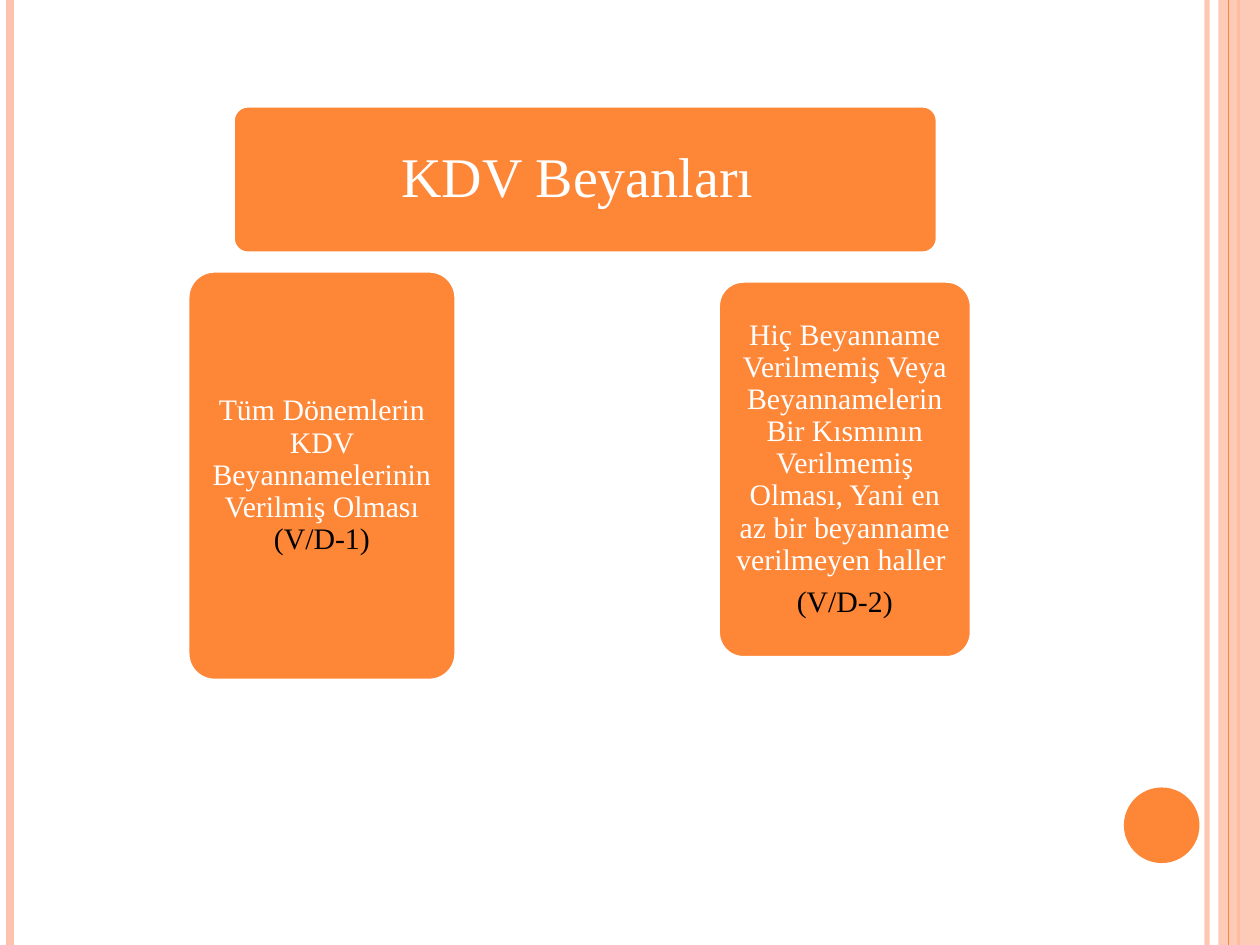
"""Build a slide of VAT return cases: a heading above two rounded boxes."""
from lxml.etree import SubElement as Sub
from pptx import Presentation
from pptx.dml.color import RGBColor
from pptx.enum.shapes import MSO_CONNECTOR as Conn, MSO_SHAPE as Geom
from pptx.enum.text import MSO_ANCHOR as Anchor, PP_ALIGN as Align
from pptx.oxml.ns import qn
from pptx.util import Inches, Pt

ORANGE, PEACH, WHITE, BLACK = "FE8637", "FEC3AE", "FFFFFF", "000000"


def paint(color, code, alpha=100):
    """Set a solid fill or a font to a hex colour, with opacity in percent."""
    if hasattr(color, "solid"):
        color.solid()
        color.fore_color.rgb = RGBColor.from_string(code)
        if alpha < 100:
            tint = next(color._xPr.iter(qn("a:srgbClr")))
            Sub(tint, qn("a:alpha"), val=str(alpha * 1000))
    else:
        color.rgb = RGBColor.from_string(code)


def write(shape, paras, size, inset):
    """Fill a shape with centred paragraphs made of (text, colour) runs."""
    frame = shape.text_frame
    look = {"word_wrap": True, "vertical_anchor": Anchor.MIDDLE}
    for side in ("left", "top", "right", "bottom"):
        look["margin_" + side] = Inches(inset)
    for key, val in look.items():
        setattr(frame, key, val)
    for num, runs in enumerate(paras):
        para = frame.add_paragraph() if num else frame.paragraphs[0]
        form = {"alignment": Align.CENTER, "line_spacing": 0.9,
                "space_before": Pt(0), "space_after": Pt(size * 0.35)}
        for key, val in form.items():
            setattr(para, key, val)
        for text, code in runs:
            run = para.add_run()
            run.text = text
            for key, val in {"name": "Times New Roman", "size": Pt(size)}.items():
                setattr(run.font, key, val)
            paint(run.font.color, code)


deck = Presentation()
deck.slide_width, deck.slide_height = Inches(10), Inches(7.5)
slide = deck.slides.add_slide(deck.slide_layouts[5])
shapes = slide.shapes
paint(slide.background.fill, WHITE)

rules = [(9.58, PEACH, 3, 93), (0.08, PEACH, 4.5, 100),
         (9.83, ORANGE, 1.5, 100), (9.75, ORANGE, 0.75, 100)]
for left, code, width, alpha in rules:
    if left == 9.75:
        band = shapes.add_shape(Geom.RECTANGLE, Inches(9.67), 0,
                                Inches(0.33), Inches(7.5))
        band.shadow.inherit = False
        paint(band.fill, PEACH, 87)
        band.line.fill.background()
    rule = shapes.add_connector(Conn.STRAIGHT, Inches(left), 0,
                                Inches(left), Inches(7.5))
    rule.line.width = Pt(width)
    paint(rule.line.fill, code, alpha)
    Sub(rule.element.spPr, qn("a:effectLst"))

dot = shapes.add_shape(Geom.OVAL, Inches(8.92), Inches(6.25),
                       Inches(0.6), Inches(0.6))
dot.shadow.inherit = False
paint(dot.fill, ORANGE)
dot.line.fill.background()

cases = [
    ((1.85, 0.84, 5.59, 1.17), []),
    ((1.49, 2.15, 2.13, 3.25), [
        [("Tüm Dönemlerin KDV Beyannamelerinin Verilmiş Olması ", WHITE),
         ("(V/D-1)", BLACK)]]),
    ((5.7, 2.23, 2.01, 2.99), [
        [("Hiç Beyanname Verilmemiş Veya Beyannamelerin Bir Kısmının "
          "Verilmemiş Olması, Yani en az bir beyanname verilmeyen haller ",
          WHITE)],
        [("(V/D-2)", BLACK)]]),
]
for place, paras in cases:
    box = shapes.add_shape(Geom.ROUNDED_RECTANGLE, *map(Inches, place))
    box.adjustments[0] = 0.1
    box.shadow.inherit = False
    paint(box.fill, ORANGE)
    box.line.width = Pt(2)
    paint(box.line.fill, WHITE)
    if paras:
        write(box, paras, 17, 0.07)

title = shapes.title
spot = {"left": 1.88, "top": 0.87, "width": 5.52, "height": 1.11}
for key, val in spot.items():
    setattr(title, key, Inches(val))
write(title, [[("KDV Beyanları ", WHITE)]], 32, 0.13)
title.element.getparent().append(title.element)

deck.save("out.pptx")
